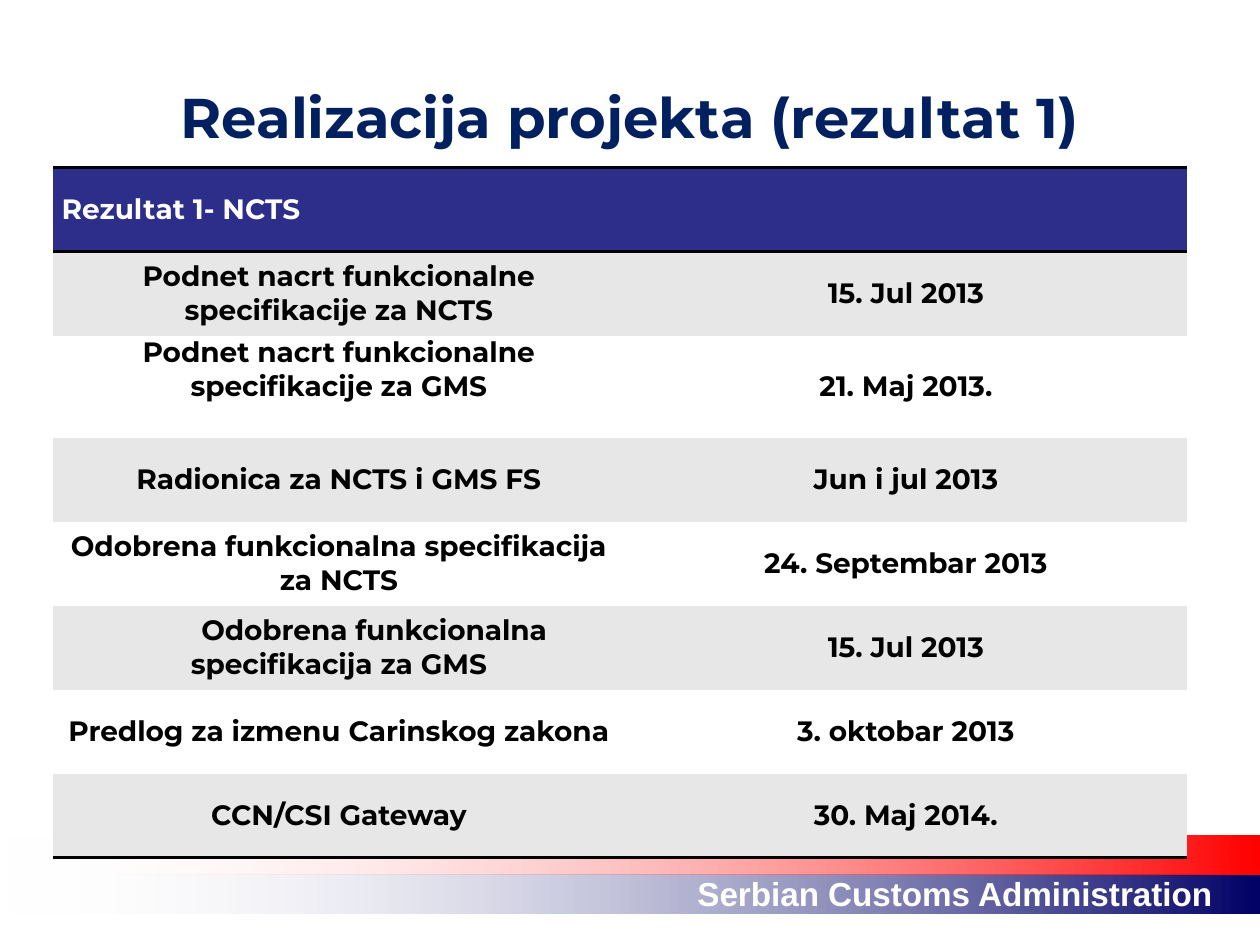
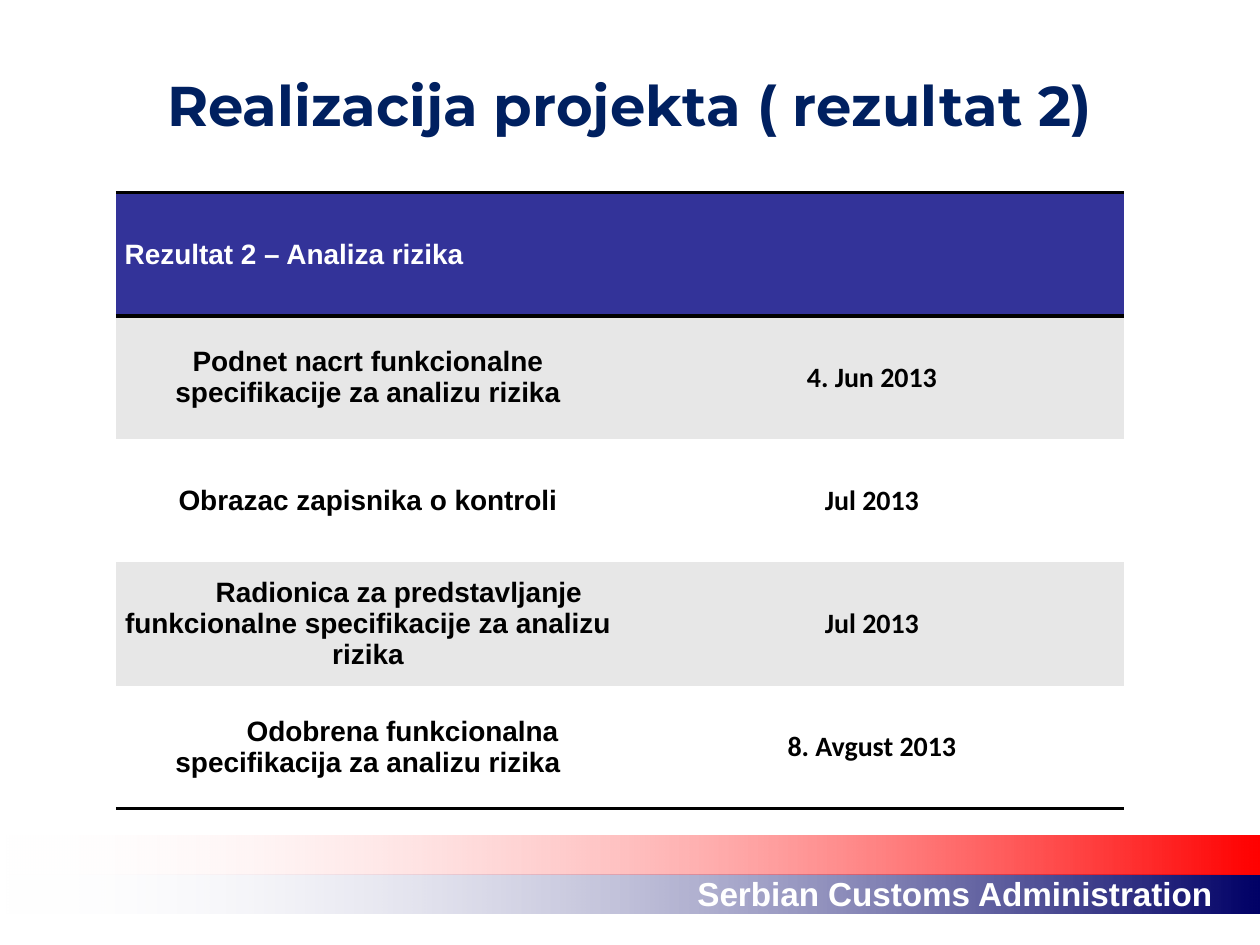
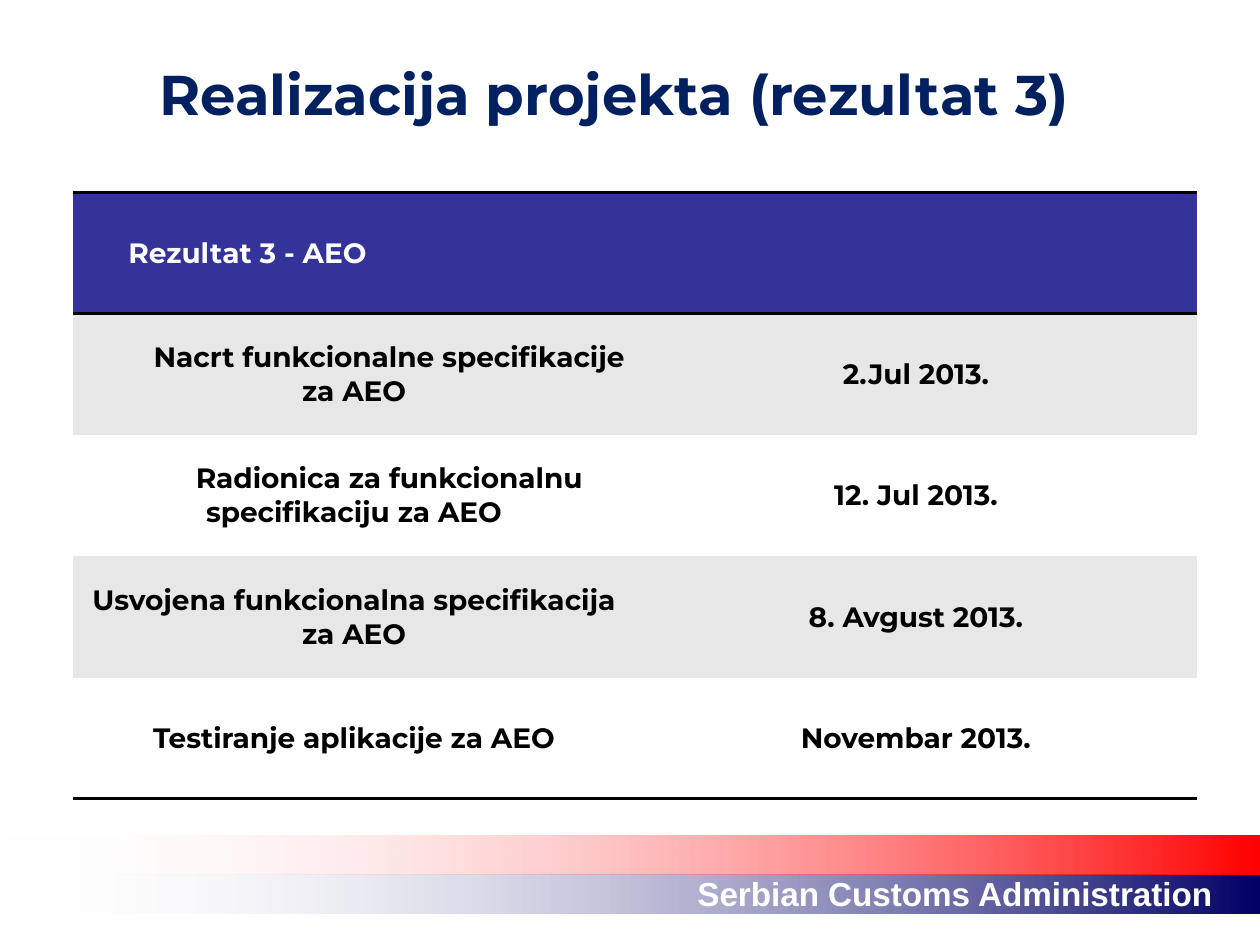
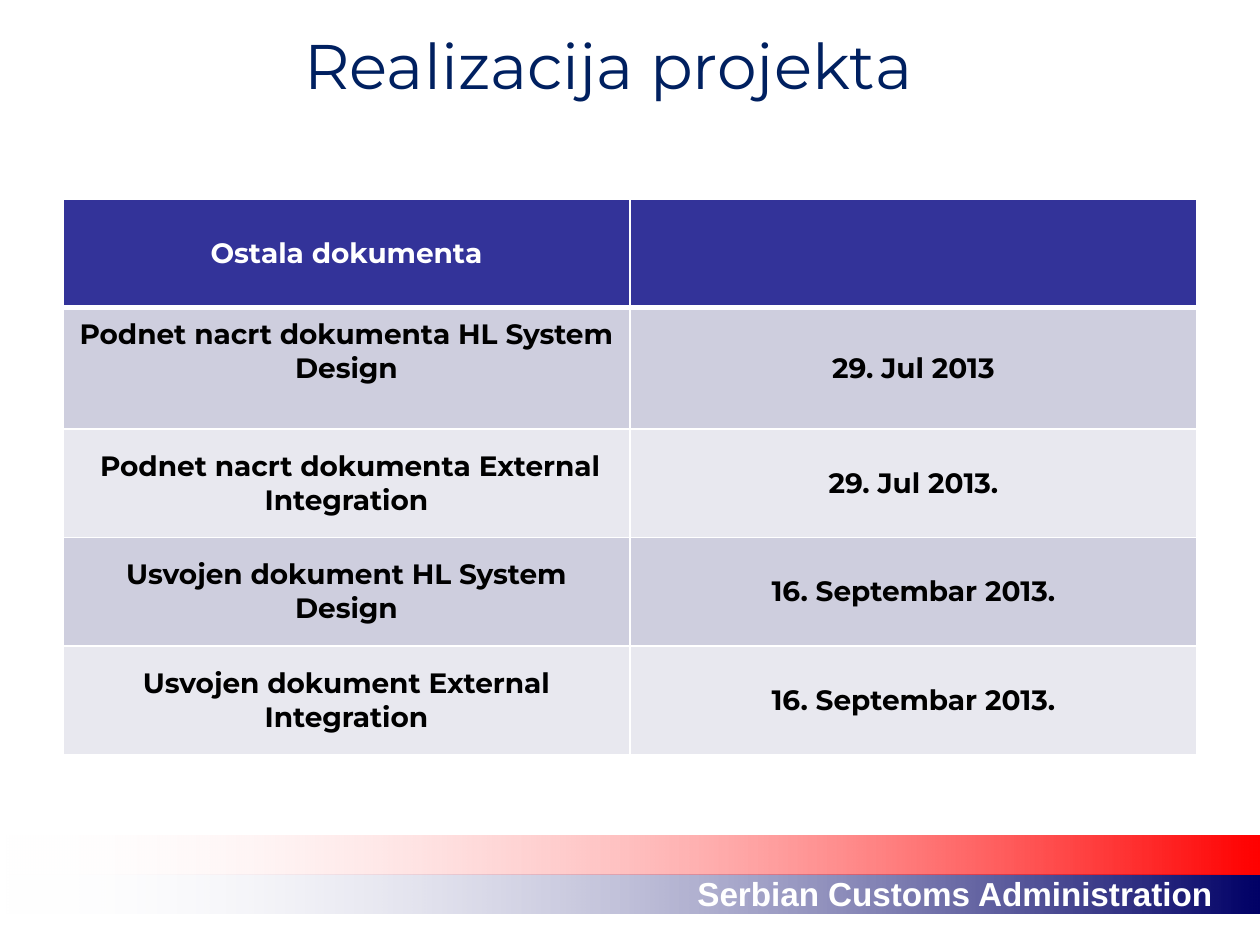
"""Builds four slides of project result tables with a shared title style and footer bands."""
from lxml import etree
from pptx import Presentation
from pptx.dml.color import RGBColor
from pptx.enum.text import MSO_ANCHOR, MSO_AUTO_SIZE, PP_ALIGN
from pptx.enum.shapes import MSO_SHAPE
from pptx.oxml.ns import qn
from pptx.util import Inches, Pt

LEFT, CENTER, RIGHT = PP_ALIGN.LEFT, PP_ALIGN.CENTER, PP_ALIGN.RIGHT
MIDDLE = MSO_ANCHOR.MIDDLE
NO_FIT = MSO_AUTO_SIZE.NONE
RECTANGLE = MSO_SHAPE.RECTANGLE
TITLE_ONLY = 5
NO_GRID_STYLE = "{2D5ABB26-0587-4C30-8999-92F81FD0307C}"

COLORS = {
    "title": "002060", "white": "FFFFFF", "black": "000000",
    "red": "FF0000", "navy": "000066", "indigo": "2D2D8A", "blue": "333399",
    "grey": "E7E7E7", "lilac": "CECEDE", "mist": "E8E8EF",
}
RGB = {name: RGBColor.from_string(value) for name, value in COLORS.items()}

deck = Presentation()
deck.slide_width, deck.slide_height = Inches(10), Inches(7.5)
COLUMN, ROW = deck.slide_width / 100, deck.slide_height / 75


def grid(left, top, width, height):
    """Turn grid columns and rows into slide lengths."""
    return [round(left * COLUMN), round(top * ROW), round(width * COLUMN), round(height * ROW)]


def apply(target, values):
    """Set each named attribute of the target."""
    for name, value in values.items():
        setattr(target, name, value)


RULED = {"header": {"lnT": ("black", 2), "lnB": ("black", 2)},
         "body": {}, "last": {"lnB": ("black", 2)}}
WHITE_GRID = {side: ("white", 1) for side in ("lnL", "lnR", "lnT", "lnB")}
BOXED = {"header": {**WHITE_GRID, "lnB": ("white", 3)}, "body": WHITE_GRID, "last": WHITE_GRID}

RESULTS = [
    {"title": "Realizacija projekta (rezultat 1)", "title_at": (5, 3, 90, 12.5),
     "title_size": 32, "title_bold": True, "below_title": 0,
     "at": (4.2, 13.3), "columns": (45.4, 44.6), "row": 6.67, "margin": 0.7,
     "fonts": ("Montserrat", "Montserrat"), "header_fill": "indigo",
     "stripes": ("grey", "white"), "borders": RULED, "header_align": LEFT,
     "rows": [
         ("Rezultat 1- NCTS", "", 0, 0),
         ("Podnet nacrt funkcionalne specifikacije za NCTS", "15. Jul 2013", 0, 0),
         ("Podnet nacrt funkcionalne specifikacije za GMS", "21. Maj 2013.", 0, 2.7),
         ("Radionica za NCTS i GMS FS", "Jun i jul 2013", 0, 0),
         ("Odobrena funkcionalna specifikacija za NCTS", "24. Septembar 2013", 0, 0),
         ("Odobrena funkcionalna specifikacija za GMS", "15. Jul 2013", 5.6, 0),
         ("Predlog za izmenu Carinskog zakona", "3. oktobar 2013", 0, 0),
         ("CCN/CSI Gateway", "30. Maj 2014.", 0, 0),
     ]},
    {"title": "Realizacija projekta ( rezultat 2)", "title_at": (5, 3, 90, 12.5),
     "title_size": 32, "title_bold": True, "below_title": 1.9,
     "at": (9.2, 15.3), "columns": (40, 40), "row": 9.78, "margin": 0.7,
     "fonts": ("Arial", "Calibri"), "header_fill": "blue",
     "stripes": ("grey", "white"), "borders": RULED, "header_align": LEFT,
     "rows": [
         ("Rezultat 2 – Analiza rizika", "", 0, 0),
         ("Podnet nacrt funkcionalne specifikacije za analizu rizika", "4. Jun 2013", 0, 0),
         ("Obrazac zapisnika o kontroli", "Jul 2013", 0, 0),
         ("Radionica za predstavljanje funkcionalne specifikacije za analizu rizika",
          "Jul 2013", 4.9, 0),
         ("Odobrena funkcionalna specifikacija za analizu rizika", "8. Avgust 2013", 5.5, 0),
     ]},
    {"title": "Realizacija projekta (rezultat 3)", "title_at": (7.5, 4.2, 82.5, 6.4),
     "title_size": 32, "title_bold": True, "below_title": 0,
     "at": (5.8, 15.3), "columns": (44.6, 44.6), "row": 9.62, "margin": 0.7,
     "fonts": ("Montserrat", "Montserrat"), "header_fill": "blue",
     "stripes": ("grey", "white"), "borders": RULED, "header_align": LEFT,
     "rows": [
         ("Rezultat 3 - AEO", "", 3.7, 0),
         ("Nacrt funkcionalne specifikacije za AEO", "2.Jul 2013.", 5.6, 0),
         ("Radionica za funkcionalnu specifikaciju za AEO", "12. Jul 2013.", 5.6, 0),
         ("Usvojena funkcionalna specifikacija za AEO", "8. Avgust 2013.", 0, 0),
         ("Testiranje aplikacije za AEO", "Novembar 2013.", 0, 0),
     ]},
    {"title": "Realizacija projekta", "title_at": (3.3, 1.7, 90, 12.5),
     "title_size": 36, "title_bold": False, "below_title": 5.7,
     "at": (5, 15.8), "columns": (45, 45), "row": 8.62, "margin": 1,
     "fonts": ("Montserrat", "Montserrat"), "header_fill": "blue",
     "stripes": ("lilac", "mist"), "borders": BOXED, "header_align": CENTER,
     "rows": [
         ("Ostala dokumenta", "", 0, 0),
         ("Podnet nacrt dokumenta HL System Design", "29. Jul 2013", 0, 2.7),
         ("Podnet nacrt dokumenta External Integration", "29. Jul 2013.", 0.6, 0),
         ("Usvojen dokument HL System Design", "16. Septembar 2013.", 0, 0),
         ("Usvojen dokument External Integration", "16. Septembar 2013.", 0, 0),
     ]},
]

layout = deck.slide_layouts[TITLE_ONLY]
for leftover in list(layout.placeholders)[1:]:
    layout.shapes.element.remove(leftover.element)

slides = [deck.slides.add_slide(layout) for _ in RESULTS]

shared = []
for top, tint in ((69.4, "navy"), (66.3, "red")):
    band = slides[0].shapes.add_shape(RECTANGLE, *grid(0, top, 100, 3.1))
    band.shadow.inherit = False
    band.line.fill.background()
    band.fill.gradient()
    band.fill.gradient_angle = 0
    for stop, shade in zip(band.fill.gradient_stops, ("white", tint)):
        stop.color.rgb = RGB[shade]
    clear_end = band.element.xpath(".//a:gs[1]/a:srgbClr")[0]
    etree.SubElement(clear_end, qn("a:alpha"), val="0")
    shared.append(band)

agency = slides[0].shapes.add_textbox(*grid(49.7, 68.8, 47.5, 4.2))
agency.text_frame.word_wrap = True
agency_line = agency.text_frame.paragraphs[0]
apply(agency_line, {"text": "Serbian Customs Administration", "alignment": RIGHT})
apply(agency_line.font, {"size": Pt(19), "name": "Arial", "bold": True})
agency_line.font.color.rgb = RGB["white"]
shared.append(agency)
for part in shared:
    layout.shapes.element.append(part.element)

for slide, result in zip(slides, RESULTS):
    heading = slide.shapes.title
    apply(heading, dict(zip(("left", "top", "width", "height"), grid(*result["title_at"]))))
    apply(heading.text_frame, {
        "text": result["title"], "auto_size": NO_FIT, "word_wrap": True,
        "vertical_anchor": MIDDLE, "margin_top": 0,
        "margin_bottom": round(result["below_title"] * ROW)})
    heading_line = heading.text_frame.paragraphs[0]
    heading_line.alignment = CENTER
    apply(heading_line.font, {"size": Pt(result["title_size"]), "name": "Montserrat",
                              "bold": result["title_bold"]})
    heading_line.font.color.rgb = RGB["title"]

    rows = result["rows"]
    heights = [result["row"] + (1 if room else 0) for *_, room in rows]
    place = grid(*result["at"], sum(result["columns"]), sum(heights))
    schedule = slide.shapes.add_table(len(rows), 2, *place).table
    apply(schedule, {"first_row": False, "horz_banding": False})
    schedule._tbl.tblPr.find(qn("a:tableStyleId")).text = NO_GRID_STYLE
    for column, width in zip(schedule.columns, result["columns"]):
        column.width = round(width * COLUMN)

    for number, (task, date, indent, room) in enumerate(rows):
        schedule.rows[number].height = round(heights[number] * ROW)
        is_header = number == 0
        kind = "header" if is_header else "last" if number == len(rows) - 1 else "body"
        fill = result["header_fill"] if is_header else result["stripes"][(number - 1) % 2]
        entries = ((task, indent, room), (date, 0, 0))
        for side, (words, first_indent, space_below) in enumerate(entries):
            cell = schedule.cell(number, side)
            margin = round(result["margin"] * COLUMN)
            apply(cell, {"text": words, "vertical_anchor": MIDDLE,
                         "margin_left": margin, "margin_right": margin,
                         "margin_top": 0, "margin_bottom": round(space_below * ROW)})
            for edge, (tint, points) in result["borders"][kind].items():
                border = etree.SubElement(cell._tc.get_or_add_tcPr(), qn(f"a:{edge}"),
                                          w=str(Pt(points)))
                ink = etree.SubElement(border, qn("a:solidFill"))
                etree.SubElement(ink, qn("a:srgbClr"), val=COLORS[tint])
            cell.fill.solid()
            cell.fill.fore_color.rgb = RGB[fill]
            line = cell.text_frame.paragraphs[0]
            line.alignment = result["header_align"] if is_header else CENTER
            if first_indent:
                line._p.get_or_add_pPr().set("indent", str(round(first_indent * COLUMN)))
            apply(line.font, {"size": Pt(16), "bold": True, "name": result["fonts"][side]})
            line.font.color.rgb = RGB["white" if is_header else "black"]

deck.save("out.pptx")
